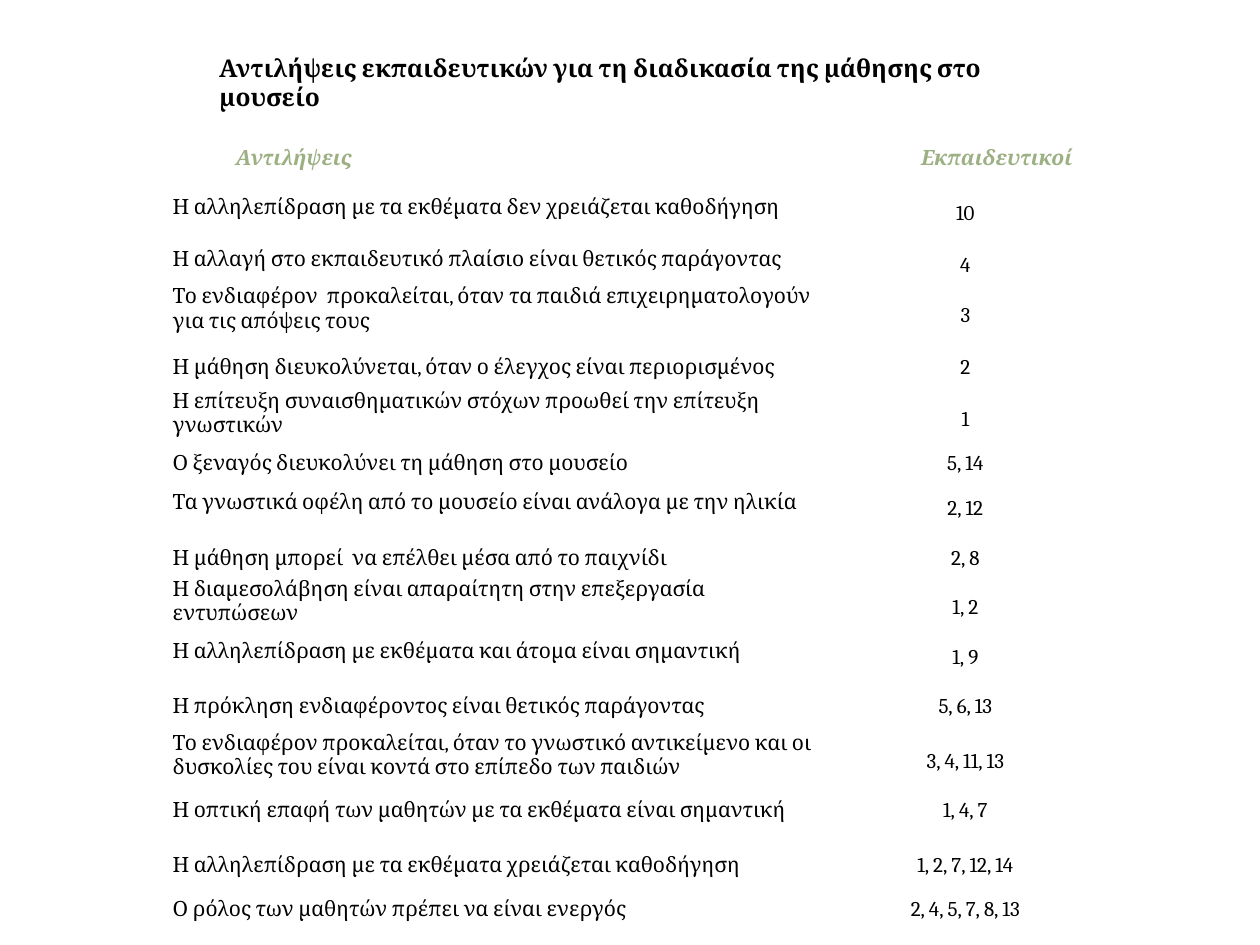
"""Build a slide with a table of teachers' views on learning in the museum."""
from dataclasses import dataclass

from pptx import Presentation
from pptx.dml.color import RGBColor
from pptx.enum.text import MSO_ANCHOR, MSO_AUTO_SIZE, PP_ALIGN
from pptx.util import Cm, Pt


@dataclass
class Theme:
    face: str = "Cambria"
    ink: RGBColor = RGBColor(0, 0, 0)
    sage: RGBColor = RGBColor(0x9C, 0xB0, 0x84)
    title: Pt = Pt(14)
    body: Pt = Pt(12)


def apply(item, form):
    """Set each attribute in a dict of format values."""
    for name, value in form.items():
        setattr(item, name, value)


def write(para, text, form, color):
    """Add one run of formatted text."""
    run = para.add_run()
    run.text = text
    apply(run.font, form)
    run.font.color.rgb = color


theme = Theme()
deck = Presentation()
apply(deck, {"slide_width": Cm(25.4), "slide_height": Cm(19.05)})
slide = deck.slides.add_slide(deck.slide_layouts[6])

rows = [
    (1.07, 1.5, "Αντιλήψεις", 1.5, "Εκπαιδευτικοί"),
    (1.14, None, "Η αλληλεπίδραση με τα εκθέματα δεν χρειάζεται καθοδήγηση", 1.5, "10"),
    (0.99, None, "Η αλλαγή στο εκπαιδευτικό πλαίσιο είναι θετικός παράγοντας", 1.5, "4"),
    (0.99, None, "Το ενδιαφέρον  προκαλείται, όταν τα παιδιά επιχειρηματολογούν για τις απόψεις τους", 1.5, "3"),
    (1.12, 1.5, "Η μάθηση διευκολύνεται, όταν ο έλεγχος είναι περιορισμένος", 1.5, "2"),
    (0.99, None, "Η επίτευξη συναισθηματικών στόχων προωθεί την επίτευξη γνωστικών", 1.5, "1"),
    (0.79, 1.5, "Ο ξεναγός διευκολύνει τη μάθηση στο μουσείο", 1.5, "5, 14"),
    (1.02, None, "Τα γνωστικά οφέλη από το μουσείο είναι ανάλογα με την ηλικία", 1.5, "2, 12"),
    (0.97, 1.5, "Η μάθηση μπορεί  να επέλθει μέσα από το παιχνίδι", 1.5, "2, 8"),
    (1.02, None, "Η διαμεσολάβηση είναι απαραίτητη στην επεξεργασία εντυπώσεων", 1.5, "1, 2"),
    (0.99, None, "Η αλληλεπίδραση με εκθέματα και άτομα είναι σημαντική", 1.5, "1, 9"),
    (0.99, 1.5, "Η πρόκληση ενδιαφέροντος είναι θετικός παράγοντας", 1.5, "5, 6, 13"),
    (1.24, None, "Το ενδιαφέρον προκαλείται, όταν το γνωστικό αντικείμενο και οι δυσκολίες του είναι κοντά στο επίπεδο των παιδιών", 1.5, "3, 4, 11, 13"),
    (0.97, None, "Η οπτική επαφή των μαθητών με τα εκθέματα είναι σημαντική", None, "1, 4, 7"),
    (0.99, 1.5, "Η αλληλεπίδραση με τα εκθέματα χρειάζεται καθοδήγηση", 1.5, "1, 2, 7, 12, 14"),
    (0.79, 1.5, "Ο ρόλος των μαθητών πρέπει να είναι ενεργός", 1.5, "2, 4, 5, 7, 8, 13"),
]
widths = (13.36, 5.44)
aligns = (PP_ALIGN.LEFT, PP_ALIGN.CENTER)
pad = {
    "margin_left": Cm(0.1), "margin_right": Cm(0.1),
    "margin_top": 0, "margin_bottom": 0,
    "vertical_anchor": MSO_ANCHOR.MIDDLE,
}

high = sum(row[0] for row in rows)
frame = slide.shapes.add_table(
    len(rows), len(widths), Cm(3.38), Cm(2.54), Cm(sum(widths)), Cm(high))
table = frame.table
apply(table, {"first_row": False, "horz_banding": False})
for col, width in zip(table.columns, widths):
    col.width = Cm(width)

for i, (height, lead, view, gap, who) in enumerate(rows):
    table.rows[i].height = Cm(height)
    head = i == 0
    form = {"name": theme.face, "size": theme.body, "bold": head, "italic": head}
    for j, (text, space) in enumerate(((view, lead), (who, gap))):
        cell = table.cell(i, j)
        apply(cell, pad)
        cell.fill.background()
        para = cell.text_frame.paragraphs[0]
        apply(para, {"alignment": aligns[j], "line_spacing": space})
        if head:
            prop = para._p.get_or_add_pPr()
            prop.set("marL", "0")
            prop.set("indent", str(Cm(1.27)))
        write(para, text, form, theme.sage if head else theme.ink)

title = slide.shapes.add_textbox(Cm(4.17), Cm(0.94), Cm(17.53), Cm(0.86))
apply(title.text_frame, {"word_wrap": True, "auto_size": MSO_AUTO_SIZE.SHAPE_TO_FIT_TEXT})
write(title.text_frame.paragraphs[0],
      "Αντιλήψεις εκπαιδευτικών για τη διαδικασία της μάθησης στο μουσείο",
      {"name": theme.face, "size": theme.title, "bold": True}, theme.ink)

deck.save("out.pptx")
